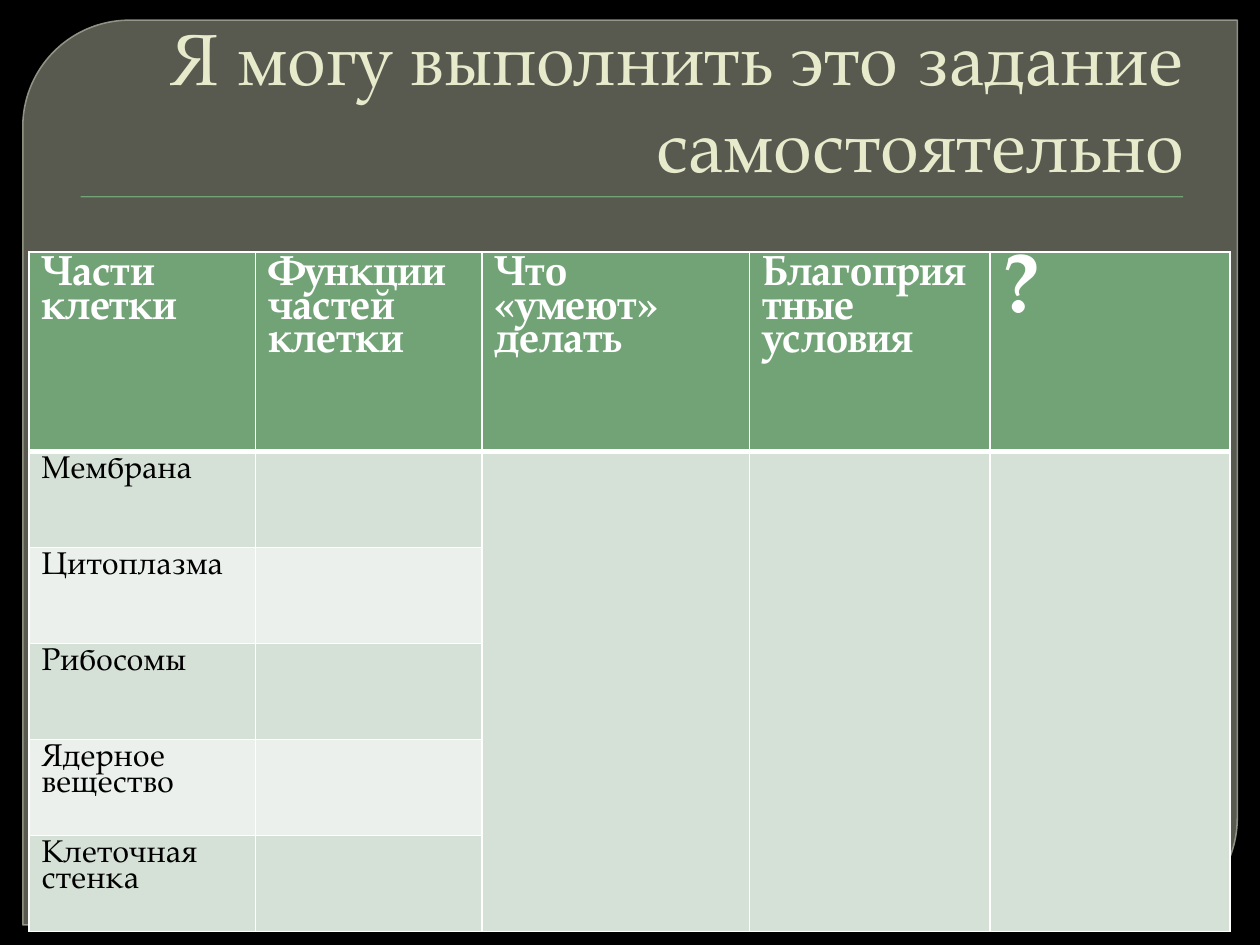
from lxml import etree
from pptx import Presentation
from pptx.dml.color import RGBColor
from pptx.enum import shapes, text
from pptx.oxml import ns
from pptx.util import Pt

# Content
TITLE = "Я могу выполнить это задание самостоятельно"
HEADERS = ["Части клетки", "Функции частей клетки", "Что «умеют»\nделать",
           "Благоприятные условия", "?"]
PARTS = ["Мембрана", "Цитоплазма", "Рибосомы", "Ядерное вещество",
         "Клеточная стенка"]

# Look
FONT = "TeX Gyre Pagella"
BLACK = RGBColor(0x00, 0x00, 0x00)
WHITE = RGBColor(0xFF, 0xFF, 0xFF)
CREAM = RGBColor(0xE7, 0xEA, 0xCB)
GREEN = RGBColor(0x72, 0xA3, 0x76)
PANEL = RGBColor(0x88, 0x8B, 0x7B)
EDGE = RGBColor(0x9D, 0xA0, 0x90)
BANDS = [RGBColor(0xD5, 0xE0, 0xD6), RGBColor(0xEB, 0xF0, 0xEC)]

# Table grid in points
COLUMNS = [129.4, 129.4, 153, 137.3, 137.3]
HEADER_HEIGHT, ROW_HEIGHT = 114.2, 54.8
FIRST_MERGED = 2


def set_opacity(fill, percent):
    color = fill._xPr.find(ns.qn("a:solidFill"))[0]
    etree.SubElement(color, ns.qn("a:alpha"), val=str(percent * 1000))


def add_block(page, kind, left, top, width, height, color):
    block = page.shapes.add_shape(kind, Pt(left), Pt(top), Pt(width), Pt(height))
    block.shadow.inherit = False
    block.fill.solid()
    block.fill.fore_color.rgb = color
    block.line.fill.background()
    return block


def style_font(font, size, color, bold=False):
    font.name, font.size, font.bold = FONT, Pt(size), bold
    font.color.rgb = color


def set_borders(cell, bottom):
    properties = cell._tc.get_or_add_tcPr()
    widths = {"lnL": 1, "lnR": 1, "lnT": 1, "lnB": bottom}
    for place, (tag, width) in enumerate(widths.items()):
        line = etree.Element(ns.qn("a:" + tag), w=str(Pt(width)))
        solid = etree.SubElement(line, ns.qn("a:solidFill"))
        etree.SubElement(solid, ns.qn("a:srgbClr"), val=str(WHITE))
        properties.insert(place, line)


def fill_cell(cell, words, size, color, back, bold=False, bottom=1):
    cell.fill.solid()
    cell.fill.fore_color.rgb = back
    set_borders(cell, bottom)
    cell.text = words
    for para in cell.text_frame.paragraphs:
        para.line_spacing = 0.82
        style_font(para.font, size, color, bold)


def main():
    deck = Presentation()
    deck.slide_width, deck.slide_height = Pt(720), Pt(540)
    page = deck.slides.add_slide(deck.slide_layouts[5])
    page.background.fill.solid()
    page.background.fill.fore_color.rgb = BLACK

    # Panel and rule under the title
    panel = add_block(page, shapes.MSO_SHAPE.ROUND_2_DIAG_RECTANGLE,
                      13, 11.5, 694, 517, PANEL)
    panel.adjustments[0], panel.adjustments[1] = 0.118, 0
    set_opacity(panel.fill, 65)
    panel.line.color.rgb = EDGE
    panel.line.width = Pt(0.87)
    set_opacity(panel.line.fill, 88)
    add_block(page, shapes.MSO_SHAPE.RECTANGLE, 46.1, 112.1, 630, 0.72, GREEN)

    # Title, brought in front of the panel
    title = page.shapes.title
    page.shapes._spTree.append(title._element)
    title.left, title.top, title.width, title.height = map(Pt, (36, 20.2, 648, 90))
    frame = title.text_frame
    frame.text = TITLE
    frame.word_wrap = True
    frame.auto_size = text.MSO_AUTO_SIZE.NONE
    frame.vertical_anchor = text.MSO_ANCHOR.BOTTOM
    para = frame.paragraphs[0]
    para.alignment = text.PP_ALIGN.RIGHT
    style_font(para.font, 41.4, CREAM)

    # Table
    height = HEADER_HEIGHT + ROW_HEIGHT * len(PARTS)
    table = page.shapes.add_table(len(PARTS) + 1, len(COLUMNS), Pt(16.6), Pt(144),
                                  Pt(sum(COLUMNS)), Pt(height)).table
    for column, width in zip(table.columns, COLUMNS):
        column.width = Pt(width)
    for index, row in enumerate(table.rows):
        row.height = Pt(ROW_HEIGHT if index else HEADER_HEIGHT)

    for column, words in enumerate(HEADERS):
        size = 48 if words == "?" else 24
        fill_cell(table.cell(0, column), words, size, WHITE, GREEN, True, 3)
    for row, part in enumerate(PARTS, 1):
        for column in range(len(COLUMNS)):
            band = 0 if column >= FIRST_MERGED else (row - 1) % 2
            fill_cell(table.cell(row, column), "" if column else part,
                      18, BLACK, BANDS[band])
    for column in range(FIRST_MERGED, len(COLUMNS)):
        table.cell(1, column).merge(table.cell(len(PARTS), column))

    deck.save("out.pptx")


if __name__ == "__main__":
    main()
